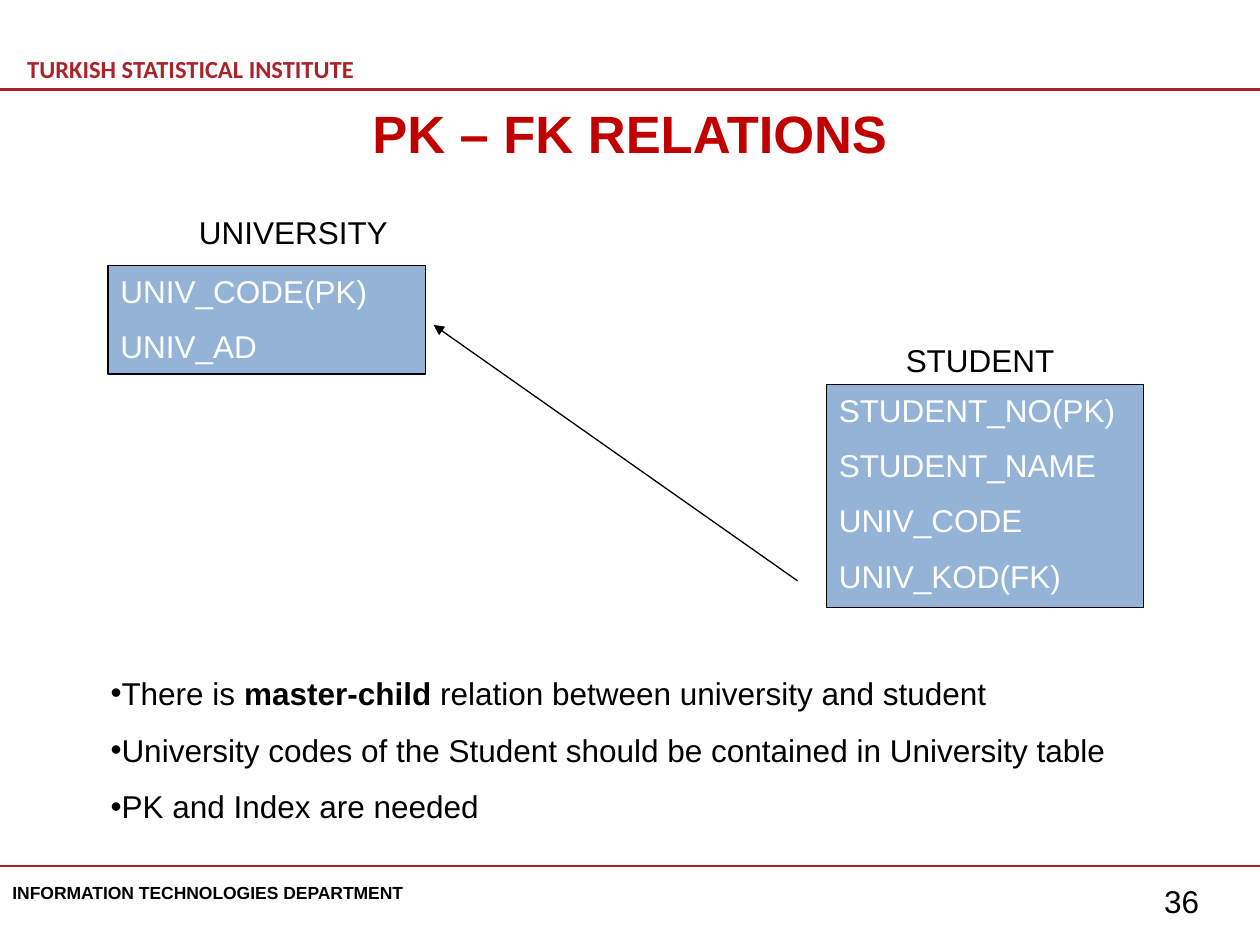
from lxml import etree
from pptx import Presentation
from pptx import util as u
from pptx.dml.color import RGBColor
from pptx.enum import shapes, text
from pptx.oxml.ns import qn

COLORS = {"red": "AB2328", "title": "C00000", "black": "000000", "white": "FFFFFF", "table": "95B3D7"}


def write(shape, lines, size=18, color="black", bold=False, font="Arial", wrap=True, gap=0):
    frame = shape.text_frame
    frame.word_wrap = wrap
    frame.text = "\n".join(lines)
    for index, paragraph in enumerate(frame.paragraphs):
        paragraph.alignment = text.PP_ALIGN.LEFT
        if index:
            paragraph.space_before = u.Pt(gap)
        for run in paragraph.runs:
            run.font.name = font
            run.font.size = u.Pt(size)
            run.font.bold = bold
            run.font.color.rgb = RGBColor.from_string(COLORS[color])
    return frame


def draw_line(slide, x1, y1, x2, y2, color, width):
    line = slide.shapes.add_connector(
        shapes.MSO_CONNECTOR.STRAIGHT, u.Cm(x1), u.Cm(y1), u.Cm(x2), u.Cm(y2))
    line.line.color.rgb = RGBColor.from_string(COLORS[color])
    line.line.width = u.Pt(width)
    etree.SubElement(line._element.spPr, qn("a:effectLst"))
    return line


presentation = Presentation()
presentation.slide_width = u.Cm(25.4)
presentation.slide_height = u.Cm(19.05)
slide = presentation.slides.add_slide(presentation.slide_layouts[5])

title = slide.shapes.title
title.left, title.top, title.width, title.height = u.Cm(1.27), u.Cm(2.18), u.Cm(22.86), u.Cm(0.99)
frame = write(title, ["PK – FK RELATIONS"], 30, "title", True)
frame.auto_size = text.MSO_AUTO_SIZE.NONE
frame.vertical_anchor = text.MSO_ANCHOR.MIDDLE
frame.margin_left = frame.margin_top = frame.margin_right = frame.margin_bottom = 0
frame.paragraphs[0].alignment = text.PP_ALIGN.CENTER

for y in (1.8, 17.46):
    draw_line(slide, 0, y, 25.4, y, "red", 1.5)

labels = [
    ("TURKISH STATISTICAL INSTITUTE", 0.3, 0.96, 9, 0.85, 14, "red", True, "Calibri"),
    ("INFORMATION TECHNOLOGIES DEPARTMENT", 0, 17.65, 8.53, 0.69, 10, "black", True, "Arial"),
    ("36", 23.22, 17.65, 1.78, 1.02, 18, "black", False, "Arial"),
    ("UNIVERSITY", 3.76, 4.17, 4.37, 1.02, 18, "black", False, "Arial"),
    ("STUDENT", 18.01, 6.76, 3.53, 1.02, 18, "black", False, "Arial"),
]
for label, left, top, width, height, size, color, bold, font in labels:
    box = slide.shapes.add_textbox(u.Cm(left), u.Cm(top), u.Cm(width), u.Cm(height))
    write(box, [label], size, color, bold, font, wrap=label == "36")

entities = [
    (2.18, 5.36, 2.18, ["UNIV_CODE(PK)", "UNIV_AD"]),
    (16.66, 7.75, 4.5, ["STUDENT_NO(PK)", "STUDENT_NAME", "UNIV_CODE", "UNIV_KOD(FK)"]),
]
for left, top, height, columns in entities:
    entity = slide.shapes.add_shape(
        shapes.MSO_SHAPE.RECTANGLE, u.Cm(left), u.Cm(top), u.Cm(6.4), u.Cm(height))
    entity.shadow.inherit = False
    entity.fill.solid()
    entity.fill.fore_color.rgb = RGBColor.from_string(COLORS["table"])
    entity.line.color.rgb = RGBColor.from_string(COLORS["black"])
    entity.line.width = u.Pt(0.75)
    write(entity, columns, color="white", gap=10).vertical_anchor = text.MSO_ANCHOR.TOP

relation = draw_line(slide, 16.08, 11.71, 8.74, 6.55, "black", 0.75)
etree.SubElement(relation.line._get_or_add_ln(), qn("a:tailEnd"), type="triangle")

notes_box = slide.shapes.add_textbox(u.Cm(1.98), u.Cm(13.08), u.Cm(21.03), u.Cm(3.71))
frame = write(notes_box, [
    "There is ",
    "University codes of the Student should be contained in University table",
    "PK and Index are needed",
])
for words, bold in (("master-child ", True), ("relation between university and student", False)):
    run = frame.paragraphs[0].add_run()
    run.text = words
    run.font.name = "Arial"
    run.font.size = u.Pt(18)
    run.font.bold = bold
    run.font.color.rgb = RGBColor.from_string(COLORS["black"])
for paragraph in frame.paragraphs:
    properties = paragraph._p.get_or_add_pPr()
    etree.SubElement(properties, qn("a:buFont"), typeface="Arial")
    etree.SubElement(properties, qn("a:buChar"), char="•")
    paragraph.line_spacing = 1.5

presentation.save("out.pptx")
